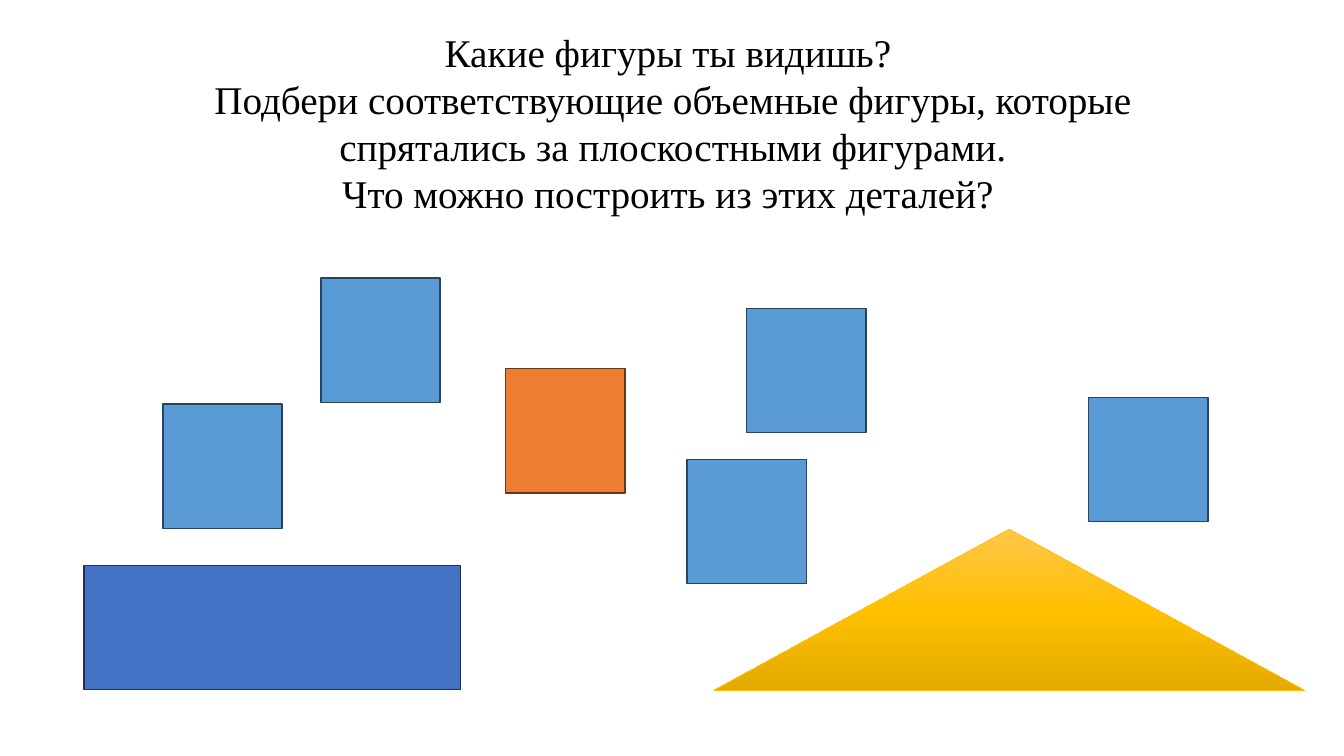
from copy import deepcopy
from dataclasses import dataclass

from pptx import Presentation
from pptx import util as u
from pptx.dml.color import RGBColor
from pptx.enum import shapes, text
from pptx.oxml.ns import qn

# The slide is a grid of 160 columns by 90 rows, twelve cells to the inch
COLUMNS, ROWS = 160, 90
CELL = u.Inches(1) / 12


@dataclass(frozen=True)
class Theme:
    font: str = "Times New Roman"
    question_size: int = 28
    ink: str = "000000"
    blue: tuple = ("5B9BD5", "28445D")
    orange: tuple = ("ED7D31", "683715")
    indigo: tuple = ("4472C4", "1E3256")
    gold_line: str = "FFC000"
    gold_stops: tuple = ((0, "FFC64B"), (0.5, "FFC000"), (1, "E3AB00"))


THEME = Theme()

QUESTIONS = (
    "Какие фигуры ты видишь? ",
    "Подбери соответствующие объемные фигуры, которые спрятались за плоскостными фигурами.",
    "Что можно построить из этих деталей? ",
)

SQUARE = (14.2, 14.8)
BLUE_SQUARES = ((81.8, 54.7), (129.6, 47.3), (19.4, 48.1), (38.2, 33.1), (88.9, 36.7))
ORANGE_SQUARE = (60.2, 43.9)


def cells(*counts):
    return [u.Emu(round(count * CELL)) for count in counts]


def color(code):
    return RGBColor.from_string(code)


def add_figure(page, kind, place, size, line, width=1):
    figure = page.shapes.add_shape(kind, *cells(*place, *size))
    figure.shadow.inherit = False
    figure.line.color.rgb = color(line)
    figure.line.width = u.Pt(width)
    return figure


def add_block(page, place, size, colors):
    fill, line = colors
    block = add_figure(page, shapes.MSO_SHAPE.RECTANGLE, place, size, line)
    block.fill.solid()
    block.fill.fore_color.rgb = color(fill)


def add_roof(page, place, size):
    roof = add_figure(page, shapes.MSO_SHAPE.ISOSCELES_TRIANGLE, place, size,
                      THEME.gold_line, 0.5)
    roof.fill.gradient()
    roof.fill.gradient_angle = 270
    # A new gradient has two stops; add the middle one
    stop_list = roof.fill._xPr.find(qn("a:gradFill")).find(qn("a:gsLst"))
    stop_list.insert(1, deepcopy(stop_list[0]))
    for stop, (position, code) in zip(roof.fill.gradient_stops, THEME.gold_stops):
        stop.position = position
        stop.color.rgb = color(code)


def add_questions(page, place, size):
    box = page.shapes.add_textbox(*cells(*place, *size))
    frame = box.text_frame
    frame.word_wrap = True
    frame.auto_size = text.MSO_AUTO_SIZE.SHAPE_TO_FIT_TEXT
    for index, question in enumerate(QUESTIONS):
        para = frame.add_paragraph() if index else frame.paragraphs[0]
        para.alignment = text.PP_ALIGN.CENTER
        span = para.add_run()
        span.text = question
        span.font.name = THEME.font
        span.font.size = u.Pt(THEME.question_size)
        span.font.color.rgb = color(THEME.ink)


def main():
    deck = Presentation()
    deck.slide_width, deck.slide_height = cells(COLUMNS, ROWS)
    page = deck.slides.add_slide(deck.slide_layouts[6])

    # Flat building blocks
    add_block(page, (10, 67.3), (44.8, 14.8), THEME.indigo)
    for place in BLUE_SQUARES:
        add_block(page, place, SQUARE, THEME.blue)
    add_block(page, ORANGE_SQUARE, SQUARE, THEME.orange)
    add_roof(page, (85, 63), (70.3, 19.2))

    # Questions for the children
    add_questions(page, (19.4, 2.8), (121.4, 23.9))

    deck.save("out.pptx")


if __name__ == "__main__":
    main()
